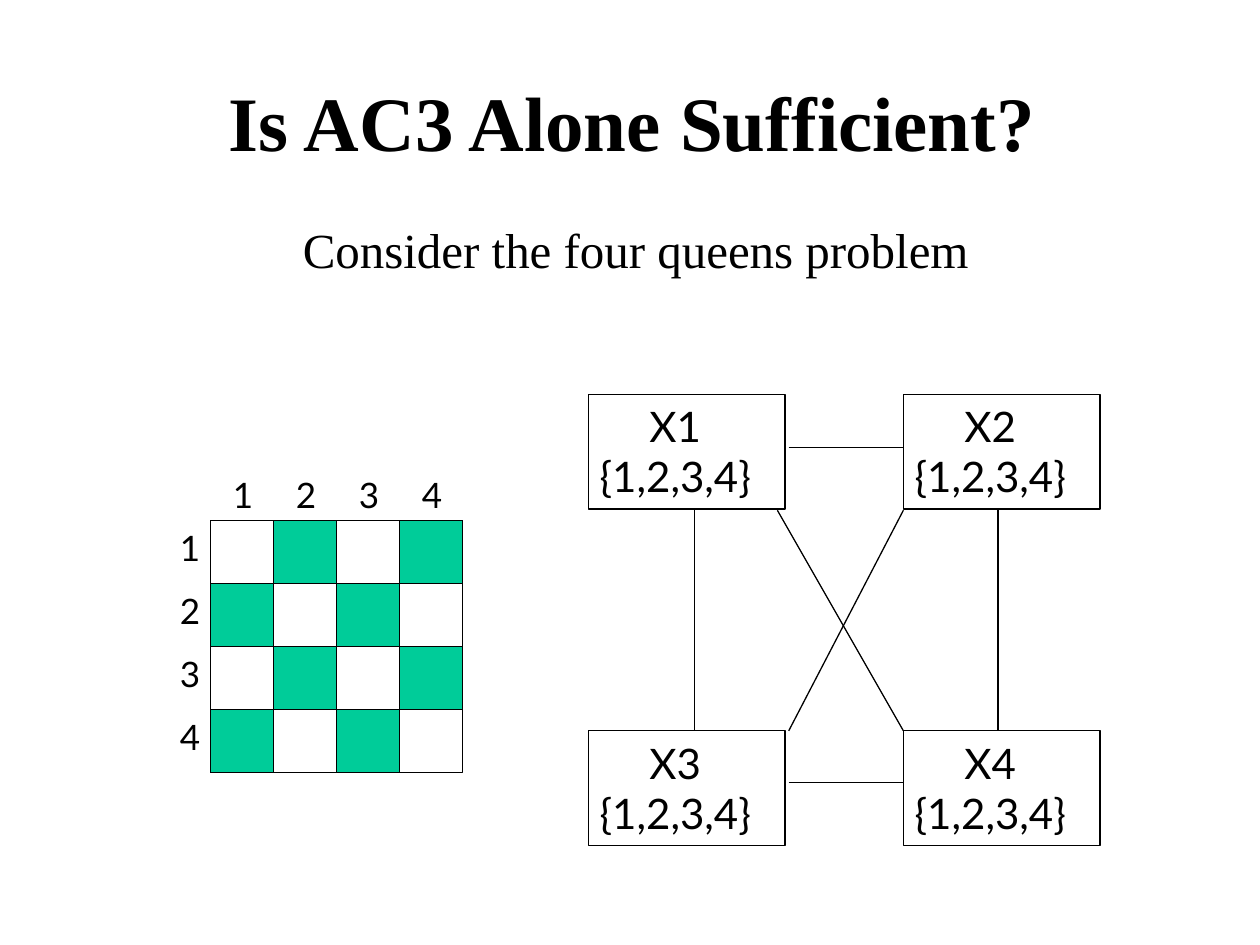
from dataclasses import dataclass
from lxml.etree import SubElement
from pptx import Presentation
from pptx.dml.color import RGBColor
from pptx.enum.shapes import MSO_CONNECTOR, MSO_SHAPE
from pptx.enum.text import MSO_ANCHOR, PP_ALIGN
from pptx.oxml.ns import qn
from pptx.util import Inches, Pt


@dataclass(frozen=True)
class Theme:
    ink: RGBColor = RGBColor(0x00, 0x00, 0x00)
    square: RGBColor = RGBColor(0x00, 0xCC, 0x99)
    serif: str = "Times New Roman"
    sans: str = "Lato"
    title_size: Pt = Pt(44)
    subtitle_size: Pt = Pt(28)
    variable_size: Pt = Pt(24)
    label_size: Pt = Pt(20)
    line_width: Pt = Pt(0.75)


THEME = Theme()
TITLE = {"name": THEME.serif, "size": THEME.title_size, "bold": True}
SUBTITLE = {"name": THEME.serif, "size": THEME.subtitle_size}
VARIABLE = {"name": THEME.sans, "size": THEME.variable_size}
LABEL = {"name": THEME.sans, "size": THEME.label_size}

BOARD_LEFT, BOARD_TOP, CELL, BOARD_SIZE = 1.67, 4.13, 0.5, 4
VARIABLES = {"X1": (4.67, 3.13), "X2": (7.17, 3.13), "X3": (4.67, 5.8), "X4": (7.17, 5.8)}
CONSTRAINTS = [
    (6.26, 3.55, 7.17, 3.55),
    (5.51, 4.05, 5.51, 5.8),
    (6.26, 6.21, 7.17, 6.21),
    (7.92, 4.05, 7.92, 5.8),
    (6.17, 4.05, 7.17, 5.8),
    (7.17, 4.05, 6.26, 5.8),
]


def set_attributes(target, values):
    for name, value in values.items():
        setattr(target, name, value)


def outline(shape):
    shape.line.color.rgb = THEME.ink
    shape.line.width = THEME.line_width


def add_text(slide, place, lines, font, align=PP_ALIGN.CENTER, **frame_values):
    box = slide.shapes.add_textbox(*map(Inches, place))
    frame = box.text_frame
    set_attributes(frame, {"word_wrap": True, **frame_values})
    for index, line in enumerate(lines):
        para = frame.add_paragraph() if index else frame.paragraphs[0]
        para.alignment = align
        span = para.add_run()
        span.text = line
        set_attributes(span.font, font)
        span.font.color.rgb = THEME.ink
    return box


def add_square(slide, left, top, size, color=None):
    square = slide.shapes.add_shape(
        MSO_SHAPE.RECTANGLE, Inches(left), Inches(top), Inches(size), Inches(size)
    )
    square.shadow.inherit = False
    outline(square)
    if color is None:
        square.fill.background()
    else:
        square.fill.solid()
        square.fill.fore_color.rgb = color


def add_label(slide, left, top, number):
    add_text(slide, (left, top, 0.35, 0.43), [str(number)], LABEL, PP_ALIGN.LEFT,
             margin_right=Inches(0))


def add_board(slide):
    add_square(slide, BOARD_LEFT, BOARD_TOP, CELL * BOARD_SIZE)
    for row in range(BOARD_SIZE):
        for column in range(BOARD_SIZE):
            if (row + column) % 2:
                add_square(slide, BOARD_LEFT + column * CELL, BOARD_TOP + row * CELL,
                           CELL, THEME.square)
    for index in range(BOARD_SIZE):
        offset = index * CELL
        add_label(slide, BOARD_LEFT - 0.34, BOARD_TOP + offset, index + 1)
        add_label(slide, BOARD_LEFT + 0.08 + offset, BOARD_TOP - 0.42, index + 1)


def add_variable(slide, name, left, top):
    box = add_text(slide, (left, top, 1.56, 0.91), [name, "{1,2,3,4}"], VARIABLE,
                   margin_left=Inches(0.02), margin_right=Inches(0.2))
    outline(box)


def add_constraint(slide, ends):
    line = slide.shapes.add_connector(MSO_CONNECTOR.STRAIGHT, *map(Inches, ends))
    outline(line)
    SubElement(line._element.spPr, qn("a:effectLst"))


def main():
    deck = Presentation()
    set_attributes(deck, {"slide_width": Inches(10), "slide_height": Inches(7.5)})
    slide = deck.slides.add_slide(deck.slide_layouts[6])
    add_text(slide, (0.77, 0.33, 8.5, 1.25), ["Is AC3 Alone Sufficient?"], TITLE,
             vertical_anchor=MSO_ANCHOR.MIDDLE)
    add_board(slide)
    for name, (left, top) in VARIABLES.items():
        add_variable(slide, name, left, top)
    for ends in CONSTRAINTS:
        add_constraint(slide, ends)
    add_text(slide, (2.27, 1.69, 5.55, 0.57), ["Consider the four queens problem"], SUBTITLE)
    deck.save("out.pptx")


if __name__ == "__main__":
    main()
